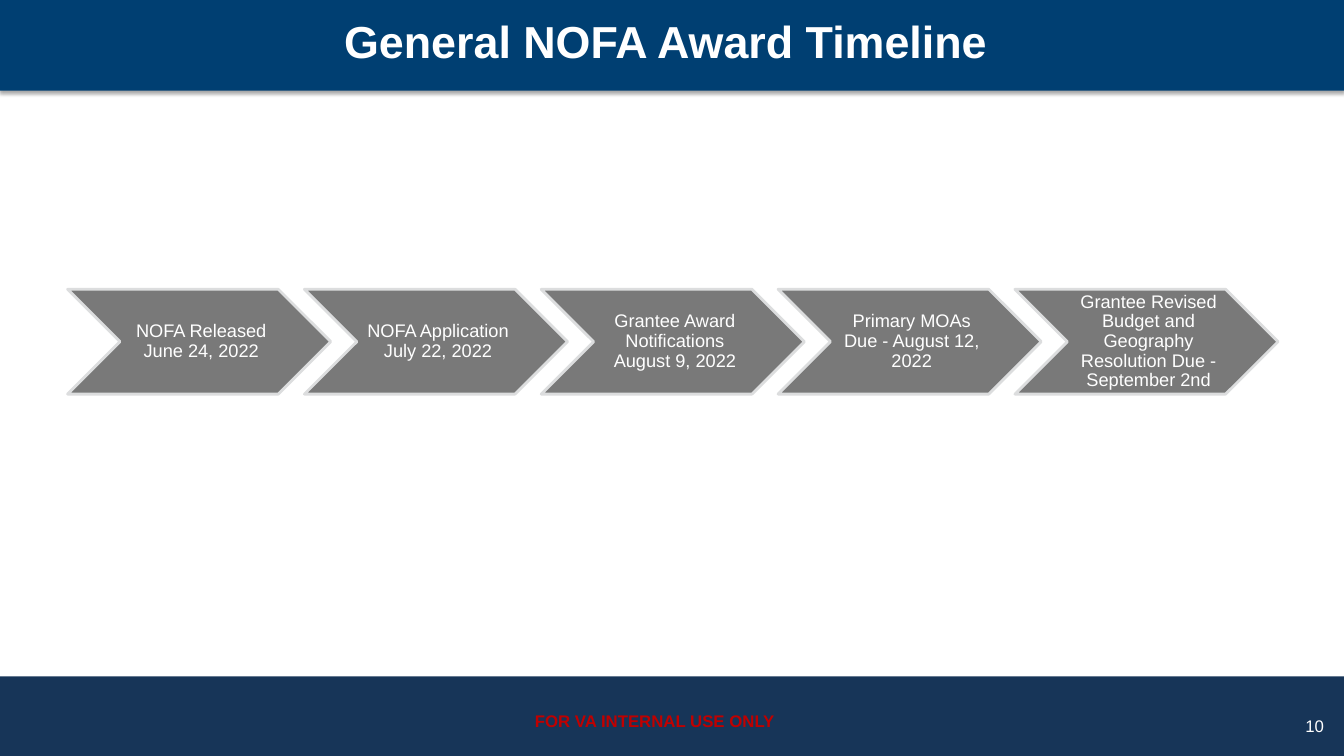
from lxml import etree
from pptx import Presentation
from pptx.dml.color import RGBColor
from pptx.enum.shapes import MSO_SHAPE
from pptx.enum.text import MSO_ANCHOR, PP_ALIGN
from pptx.oxml.ns import qn
from pptx.util import Inches, Pt

COLORS = {
    "header": "003F72",
    "footer": "173558",
    "step": "797979",
    "outline": "DCDDDE",
    "text": "FFFFFF",
    "notice": "C00000",
    "shadow": "000000",
}
FONT = "Arial"
SLIDE_WIDTH, SLIDE_HEIGHT = 13.33, 7.5

# Timeline grid: equal steps, each overlapping the next
STEP_LEFT, STEP_TOP = 0.67, 2.87
STEP_WIDTH, STEP_HEIGHT = 2.61, 1.04
STEP_PITCH = 0.9 * STEP_WIDTH
STEPS = [
    "NOFA Released June 24, 2022",
    "NOFA Application July 22, 2022",
    "Grantee Award Notifications August 9, 2022",
    "Primary MOAs Due - August 12, 2022",
    "Grantee Revised Budget and Geography Resolution Due - September 2nd",
]


def color(name):
    return RGBColor.from_string(COLORS[name])


def set_text(shape, text, size, color_name="text", bold=False,
             align=PP_ALIGN.CENTER, anchor=MSO_ANCHOR.MIDDLE):
    frame = shape.text_frame
    frame.text = text
    frame.word_wrap = True
    frame.vertical_anchor = anchor
    paragraph = frame.paragraphs[0]
    paragraph.alignment = align
    font = paragraph.runs[0].font
    font.name, font.size, font.bold = FONT, Pt(size), bold
    font.color.rgb = color(color_name)
    return frame


def add_label(slide, box, text, size, **style):
    shape = slide.shapes.add_textbox(*map(Inches, box))
    set_text(shape, text, size, **style)


def add_filled_shape(slide, kind, box, fill):
    shape = slide.shapes.add_shape(kind, *map(Inches, box))
    shape.shadow.inherit = False
    shape.fill.solid()
    shape.fill.fore_color.rgb = color(fill)
    shape.line.fill.background()
    return shape


def add_drop_shadow(shape):
    effects = shape.element.spPr.find(qn("a:effectLst"))
    shadow = etree.SubElement(
        effects, qn("a:outerShdw"), blurRad=str(Pt(3.1)), dist=str(Pt(1.8)),
        dir="5400000", algn="t", rotWithShape="0")
    tint = etree.SubElement(shadow, qn("a:srgbClr"), val=COLORS["shadow"])
    etree.SubElement(tint, qn("a:alpha"), val="35000")


def add_step(slide, index, text):
    box = (STEP_LEFT + index * STEP_PITCH, STEP_TOP, STEP_WIDTH, STEP_HEIGHT)
    step = add_filled_shape(slide, MSO_SHAPE.CHEVRON, box, "step")
    step.line.color.rgb = color("outline")
    step.line.width = Pt(2)
    frame = set_text(step, text, 13)
    frame.margin_left = Inches(0.06)
    frame.margin_top = frame.margin_right = frame.margin_bottom = Inches(0.02)
    frame.paragraphs[0].line_spacing = 0.9


def main():
    presentation = Presentation()
    presentation.slide_width = Inches(SLIDE_WIDTH)
    presentation.slide_height = Inches(SLIDE_HEIGHT)
    slide = presentation.slides.add_slide(presentation.slide_layouts[6])

    # Footer band with notice and page number
    add_filled_shape(slide, MSO_SHAPE.RECTANGLE,
                     (0, 6.71, SLIDE_WIDTH, 0.79), "footer")
    add_label(slide, (4.33, 7, 4.33, 0.3), "FOR VA INTERNAL USE ONLY", 12,
              color_name="notice", bold=True, anchor=MSO_ANCHOR.TOP)
    add_label(slide, (10.12, 7, 3.11, 0.4), "10", 12, align=PP_ALIGN.RIGHT)

    # Header band with title
    header = add_filled_shape(slide, MSO_SHAPE.RECTANGLE,
                              (0, 0, SLIDE_WIDTH, 0.9), "header")
    add_drop_shadow(header)
    add_label(slide, (0, -0.35, SLIDE_WIDTH, 1.5),
              "General NOFA Award Timeline ", 32, bold=True)

    # Timeline
    for index, text in enumerate(STEPS):
        add_step(slide, index, text)

    presentation.save("out.pptx")


if __name__ == "__main__":
    main()
